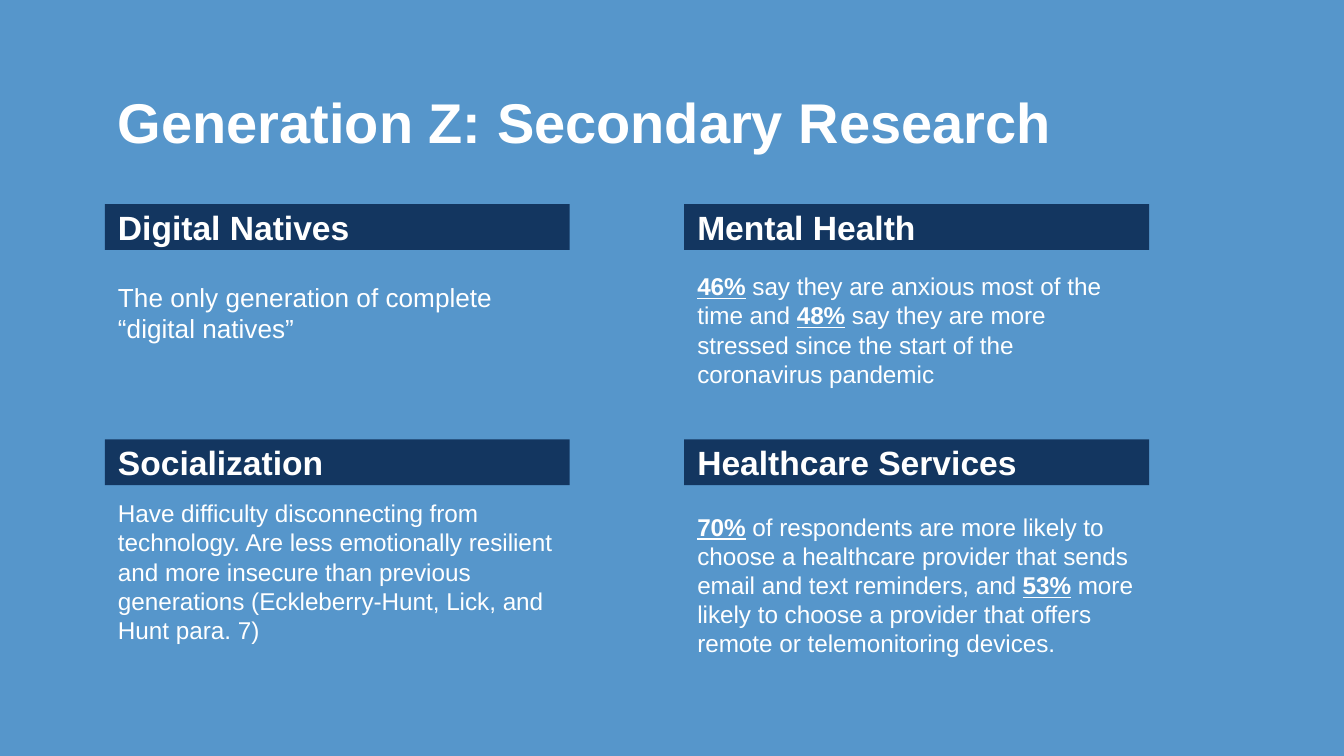
import pptx
import pptx.util
from pptx.dml.color import RGBColor
from pptx.enum.shapes import MSO_SHAPE
from pptx.enum.text import MSO_ANCHOR, PP_ALIGN
from pptx.util import Inches

SKY_BLUE = RGBColor(0x56, 0x96, 0xCB)
NAVY = RGBColor(0x13, 0x36, 0x60)
WHITE = RGBColor(0xFF, 0xFF, 0xFF)

COLUMN_LEFTS = (0.78, 5.09)
ROW_TOPS = (1.52, 3.27)
CARD_WIDTH = 3.46
HEADING_HEIGHT = 0.34

# Column, row, heading, body runs (text, emphasized), body size, body offset, body height
CARDS = [
    (0, 0, "Digital Natives",
     [("The only generation of complete “digital natives”", False)],
     14, 0.47, 0.89),
    (0, 1, "Socialization",
     [("Have difficulty disconnecting from technology. Are less emotionally "
       "resilient and more insecure than previous generations "
       "(Eckleberry-Hunt, Lick, and Hunt para. 7)", False)],
     13, 0.34, 1.3),
    (1, 0, "Mental Health",
     [("46%", True), (" say they are anxious most of the time and ", False),
      ("48%", True), (" say they are more stressed since the start of the "
                      "coronavirus pandemic", False)],
     13, 0.4, 1.08),
    (1, 1, "Healthcare Services",
     [("70%", True), (" of respondents are more likely to choose a healthcare "
                      "provider that sends email and text reminders, and ", False),
      ("53%", True), (" more likely to choose a provider that offers remote or "
                      "telemonitoring devices.", False)],
     13, 0.44, 0.89),
]


def write_text(shape, runs, size, bold=False, anchor=MSO_ANCHOR.TOP):
    """Fill a shape with (text, emphasized) runs; emphasis is bold and underlined."""
    frame = shape.text_frame
    frame.word_wrap = True
    frame.vertical_anchor = anchor
    frame.margin_left = frame.margin_right = Inches(0.1)
    frame.margin_top = frame.margin_bottom = Inches(0.1)
    paragraph = frame.paragraphs[0]
    paragraph.alignment = PP_ALIGN.LEFT
    for text, emphasized in runs:
        run = paragraph.add_run()
        run.text = text
        run.font.name = "Arial"
        run.font.size = pptx.util.Pt(size)
        run.font.color.rgb = WHITE
        run.font.bold = bold or emphasized
        run.font.underline = emphasized


def add_title(slide, left, top, width, height):
    title = slide.shapes.add_textbox(
        Inches(left), Inches(top), Inches(width), Inches(height))
    write_text(title, [("Generation Z: Secondary Research", False)], 30,
               bold=True, anchor=MSO_ANCHOR.MIDDLE)


def add_card(slide, left, top, heading, body_runs, body_size, body_offset, body_height):
    bar = slide.shapes.add_shape(
        MSO_SHAPE.RECTANGLE, Inches(left), Inches(top),
        Inches(CARD_WIDTH), Inches(HEADING_HEIGHT))
    bar.shadow.inherit = False
    bar.fill.solid()
    bar.fill.fore_color.rgb = NAVY
    bar.line.fill.background()
    write_text(bar, [(heading, False)], 18, bold=True, anchor=MSO_ANCHOR.MIDDLE)

    body = slide.shapes.add_textbox(
        Inches(left), Inches(top + body_offset),
        Inches(CARD_WIDTH), Inches(body_height))
    write_text(body, body_runs, body_size)


def main():
    presentation = pptx.Presentation()
    presentation.slide_width = Inches(10)
    presentation.slide_height = Inches(10 * 9 / 16)
    slide = presentation.slides.add_slide(presentation.slide_layouts[6])
    slide.background.fill.solid()
    slide.background.fill.fore_color.rgb = SKY_BLUE

    add_title(slide, 0.78, 0.59, 8.44, 0.62)
    for column, row, *content in CARDS:
        add_card(slide, COLUMN_LEFTS[column], ROW_TOPS[row], *content)
    presentation.save("out.pptx")


if __name__ == "__main__":
    main()
